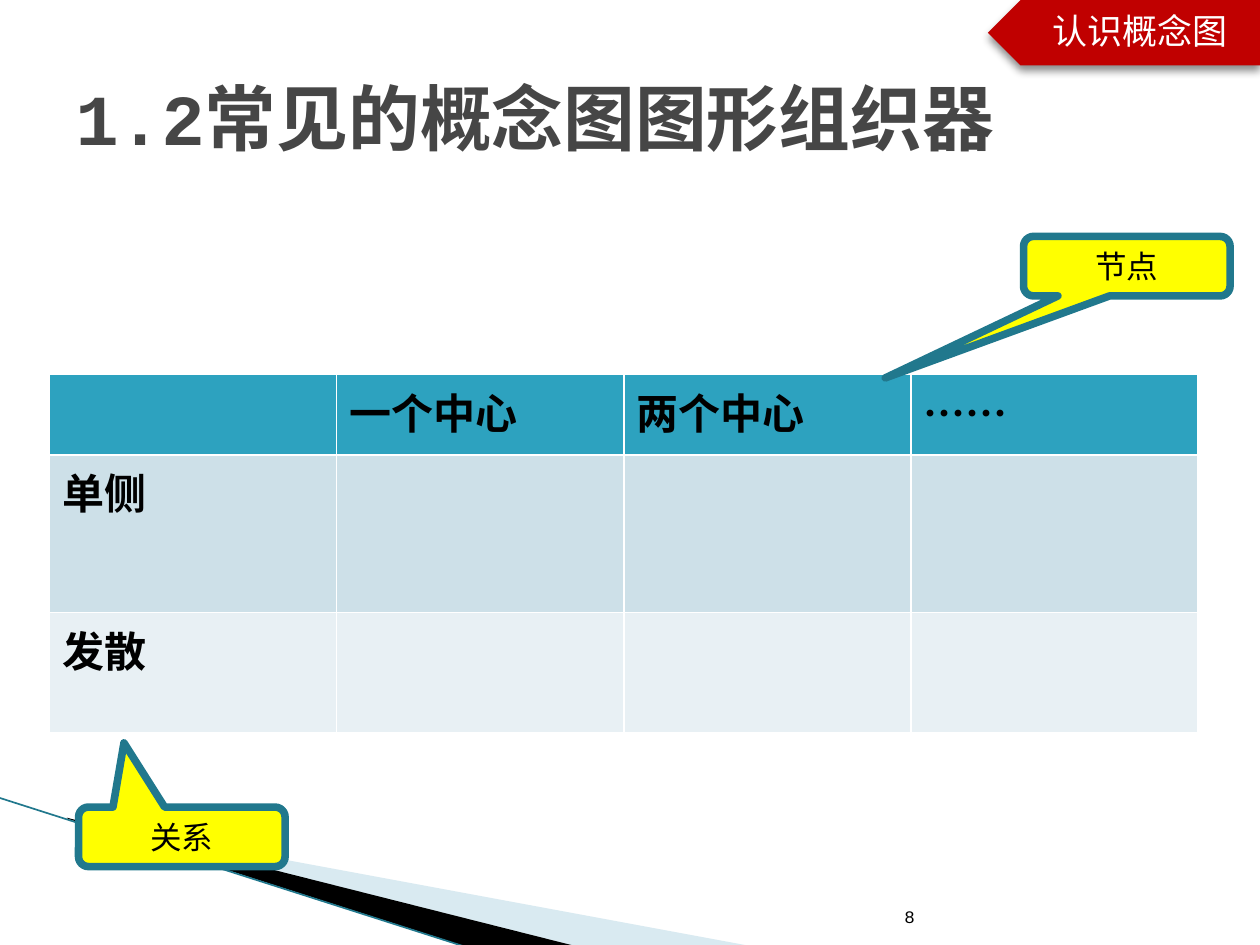
"""Build the slide on common graphic organizers for concept maps."""
from lxml import etree
from pptx import Presentation
from pptx.dml.color import RGBColor
from pptx.enum import shapes, text
from pptx.oxml import ns, parse_xml
from pptx.util import Pt

BLACK = RGBColor(0x00, 0x00, 0x00)
WHITE = RGBColor(0xFF, 0xFF, 0xFF)
GRAY = RGBColor(0x46, 0x46, 0x46)
PALE_BLUE = RGBColor(0xA0, 0xCB, 0xDC)
DARK_TEAL = RGBColor(0x21, 0x78, 0x8D)
YELLOW = RGBColor(0xFF, 0xFF, 0x00)
RED = RGBColor(0xC0, 0x00, 0x00)
ROW_FILLS = [RGBColor(0x2D, 0xA2, 0xBF), RGBColor(0xCD, 0xE0, 0xE8), RGBColor(0xE8, 0xF0, 0xF4)]
LATIN = "Courier New"
CHINESE = "Noto Sans CJK SC"


def format_text(frame, size, color, font=LATIN, bold=False, align=None):
    for paragraph in frame.paragraphs:
        paragraph.alignment = align
        for run in paragraph.runs:
            run.font.size = Pt(size)
            run.font.bold = bold
            run.font.color.rgb = color
            run.font.name = font
            properties = run._r.get_or_add_rPr()
            properties.set("lang", "zh-CN")
            east_asian = etree.SubElement(properties, ns.qn("a:ea"))
            east_asian.set("typeface", CHINESE)


presentation = Presentation()
presentation.slide_width = Pt(720)
presentation.slide_height = Pt(540)
slide = presentation.slides.add_slide(presentation.slide_layouts[5])

wedges = [
    (PALE_BLUE, 40, [(39.6, 468.5), (428.4, 540.5), (328.3, 540.5), (39.6, 468)]),
    (BLACK, 100, [(38.2, 467.3), (329, 540.7), (267.8, 541.4), (38.9, 468)]),
]
for color, opacity, points in wedges:
    corners = [(Pt(x), Pt(y)) for x, y in points]
    builder = slide.shapes.build_freeform(*corners[0])
    builder.add_line_segments(corners[1:])
    wedge = builder.convert_to_shape()
    wedge.shadow.inherit = False
    wedge.fill.solid()
    wedge.fill.fore_color.rgb = color
    wedge.line.fill.background()
    color_element = wedge._element.spPr.find(".//" + ns.qn("a:srgbClr"))
    etree.SubElement(color_element, ns.qn("a:alpha")).set("val", str(opacity * 1000))

edge = slide.shapes.add_connector(
    shapes.MSO_CONNECTOR.STRAIGHT, Pt(-0.7), Pt(455.8), Pt(267.1), Pt(541.4))
edge.line.color.rgb = DARK_TEAL
edge.line.width = Pt(0.95)
etree.SubElement(edge._element.spPr, ns.qn("a:effectLst"))

title = slide.shapes.title
title.left, title.top, title.width, title.height = Pt(36), Pt(21.6), Pt(648), Pt(90)
title.text_frame.text = "1.2常见的概念图图形组织器"
title.text_frame.vertical_anchor = text.MSO_ANCHOR.MIDDLE
format_text(title.text_frame, 41, GRAY, bold=True, align=text.PP_ALIGN.LEFT)

rows = [
    ["", "一个中心", "两个中心", "……"],
    ["单侧", "", "", ""],
    ["发散", "", "", ""],
]
row_heights = [46, 90, 69]
table = slide.shapes.add_table(3, 4, Pt(28.3), Pt(214), Pt(656.4), Pt(sum(row_heights))).table
for row, height, fill, labels in zip(table.rows, row_heights, ROW_FILLS, rows):
    row.height = Pt(height)
    for cell, label in zip(row.cells, labels):
        cell.fill.solid()
        cell.fill.fore_color.rgb = fill
        if label:
            cell.text_frame.text = label
            format_text(cell.text_frame, 24, BLACK, CHINESE, bold=True)

number = slide.shapes.add_textbox(Pt(344.9), Pt(504.7), Pt(185), Pt(28.8))
number.text_frame.word_wrap = True
number.text_frame.vertical_anchor = text.MSO_ANCHOR.BOTTOM
number.text_frame.text = "8"
format_text(number.text_frame, 10, BLACK, align=text.PP_ALIGN.RIGHT)

callouts = [
    ("节点", 584.9, 135.1, -1.17, 1.88),
    ("关系", 44.9, 461.2, -0.28, -1.58),
]
for label, left, top, tip_x, tip_y in callouts:
    callout = slide.shapes.add_shape(
        shapes.MSO_SHAPE.ROUNDED_RECTANGULAR_CALLOUT, Pt(left), Pt(top), Pt(118), Pt(34))
    callout.adjustments[0] = tip_x
    callout.adjustments[1] = tip_y
    callout.shadow.inherit = False
    callout.fill.solid()
    callout.fill.fore_color.rgb = YELLOW
    callout.line.color.rgb = DARK_TEAL
    callout.line.width = Pt(4.33)
    callout.text_frame.text = label
    callout.text_frame.vertical_anchor = text.MSO_ANCHOR.MIDDLE
    format_text(callout.text_frame, 18, BLACK, align=text.PP_ALIGN.CENTER)

section = slide.shapes.add_group_shape()
banner = section.shapes.add_shape(shapes.MSO_SHAPE.PENTAGON, Pt(564.5), 0, Pt(155.5), Pt(37.4))
banner.rotation = 180
banner.fill.solid()
banner.fill.fore_color.rgb = RED
banner.line.fill.background()
banner._element.spPr.append(parse_xml(
    f'<a:effectLst {ns.nsdecls("a")}>'
    '<a:outerShdw blurRad="63500" dist="38100" dir="5400000" rotWithShape="0">'
    '<a:srgbClr val="000000"><a:alpha val="45000"/></a:srgbClr>'
    '</a:outerShdw></a:effectLst>'))

section_label = section.shapes.add_textbox(Pt(569.5), 0, Pt(150.5), Pt(37.4))
frame = section_label.text_frame
frame.word_wrap = True
frame.vertical_anchor = text.MSO_ANCHOR.MIDDLE
frame.margin_left, frame.margin_right = Pt(29.5), Pt(16.5)
frame.margin_top = frame.margin_bottom = Pt(8.6)
frame.text = "认识概念图"
frame.paragraphs[0].line_spacing = 0.9
format_text(frame, 20, WHITE, CHINESE, align=text.PP_ALIGN.CENTER)

presentation.save("out.pptx")
